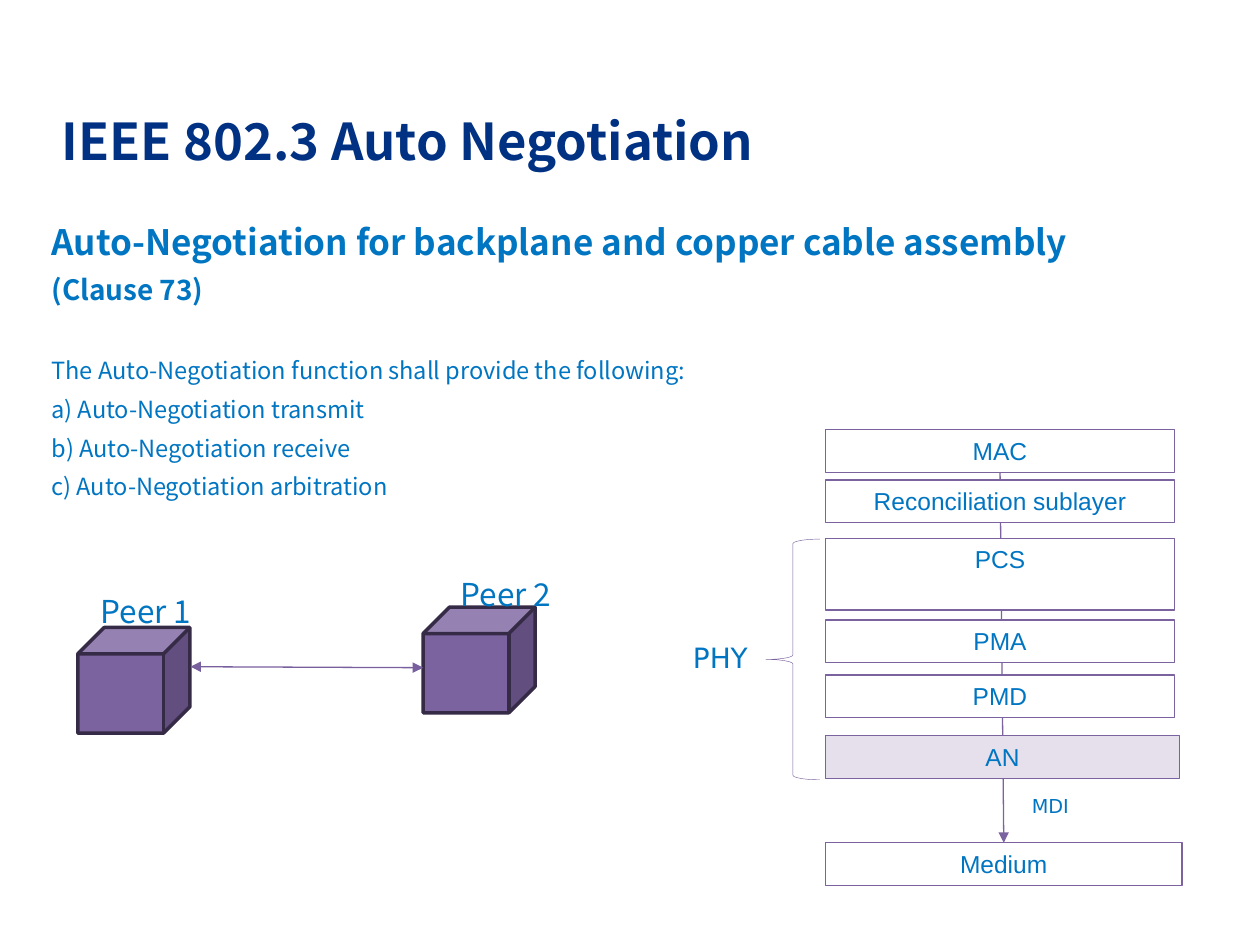
import pptx
import pptx.dml.color
import pptx.enum.shapes
import pptx.enum.text
import pptx.oxml.ns
import pptx.util
import lxml.etree

Cm, Pt = pptx.util.Cm, pptx.util.Pt
SHAPE = pptx.enum.shapes.MSO_SHAPE
STRAIGHT = pptx.enum.shapes.MSO_CONNECTOR.STRAIGHT
ANCHOR = pptx.enum.text.MSO_ANCHOR
ALIGN = pptx.enum.text.PP_ALIGN
SANS, BLUE, PURPLE = "Noto Sans CJK JP", "0075C2", "7B639F"


def rgb(hex_value):
    return pptx.dml.color.RGBColor.from_string(hex_value)


def write(shape, text, size, font=SANS, color=BLUE, bold=False, align=ALIGN.LEFT,
          anchor=ANCHOR.TOP, before=0, after=0, line_height=None):
    """Add one formatted paragraph to a shape, reusing an empty first one."""
    frame = shape.text_frame
    frame.word_wrap = True
    frame.vertical_anchor = anchor
    paragraph = frame.add_paragraph() if frame.text else frame.paragraphs[0]
    paragraph.alignment = align
    paragraph.space_before, paragraph.space_after = Pt(before), Pt(after)
    if line_height:
        paragraph.line_spacing = Pt(line_height)
    run = paragraph.add_run()
    run.text = text
    run.font.name, run.font.size, run.font.bold = font, Pt(size), bold
    run.font.color.rgb = rgb(color)


deck = pptx.Presentation()
deck.slide_width, deck.slide_height = Cm(25.4), Cm(19.05)
slide = deck.slides.add_slide(deck.slide_layouts[6])
shapes = slide.shapes

# Title
title = shapes.add_textbox(Cm(0.99), Cm(1.32), Cm(21.92), Cm(3))
write(title, "IEEE 802.3 Auto Negotiation", 29, color="003182", bold=True,
      anchor=ANCHOR.MIDDLE)

# Clause summary: text, size, bold, space before
clause = shapes.add_textbox(Cm(0.79), Cm(4.32), Cm(23.39), Cm(1.7))
for text, size, bold, before in [
    ("Auto-Negotiation for backplane and copper cable assembly", 20, True, 0),
    ("(Clause 73)", 16, True, 0),
    ("The Auto-Negotiation function shall provide the following:", 13.5, False, 22),
    ("a) Auto-Negotiation transmit", 13.5, False, 0),
    ("b) Auto-Negotiation receive", 13.5, False, 0),
    ("c) Auto-Negotiation arbitration", 13.5, False, 0),
]:
    write(clause, text, size, bold=bold, before=before, after=6,
          line_height=1.2 * size)

# Peers: label position, cube position
for peer, label_left, label_top, cube_left, cube_top in [
    ("Peer 1", 1.78, 11.81, 1.57, 12.65),
    ("Peer 2", 9.04, 11.46, 8.53, 12.24),
]:
    cube = shapes.add_shape(SHAPE.CUBE, Cm(cube_left), Cm(cube_top), Cm(2.26), Cm(2.13))
    cube.shadow.inherit = False
    cube.fill.solid()
    cube.fill.fore_color.rgb = rgb(PURPLE)
    cube.line.color.rgb = rgb("362B46")
    cube.line.width = Pt(2)
    label = shapes.add_textbox(Cm(label_left), Cm(label_top), Cm(4.7), Cm(1.02))
    write(label, peer, 18)

# Link between the peers, and the spine that runs behind the layer stack
peer_link = shapes.add_connector(STRAIGHT, Cm(3.84), Cm(13.44), Cm(8.53), Cm(13.46))
spine = shapes.add_connector(STRAIGHT, Cm(20.16), Cm(9.52), Cm(20.24), Cm(16.99))
for connector, color, arrow_ends in [
    (peer_link, "785F9D", ("headEnd", "tailEnd")),
    (spine, PURPLE, ("tailEnd",)),
]:
    connector.line.color.rgb = rgb(color)
    connector.line.width = Pt(0.75)
    outline = connector.line._get_or_add_ln()
    for end in arrow_ends:
        lxml.etree.SubElement(outline, pptx.oxml.ns.qn(f"a:{end}"), type="triangle")
    lxml.etree.SubElement(connector._element.spPr, pptx.oxml.ns.qn("a:effectLst"))

# Layer stack: name, top, width, height, fill
layers = {}
for name, top, width, height, fill in [
    ("MAC", 8.66, 7.04, 0.86, "FFFFFF"),
    ("Reconciliation sublayer", 9.68, 7.04, 0.86, "FFFFFF"),
    ("PCS", 10.85, 7.04, 1.45, "FFFFFF"),
    ("PMA", 12.5, 7.04, 0.86, "FFFFFF"),
    ("PMD", 13.61, 7.04, 0.86, "FFFFFF"),
    ("AN", 14.83, 7.14, 0.86, "E5E0EC"),
    ("Medium", 16.99, 7.19, 0.86, "FFFFFF"),
]:
    layer = shapes.add_shape(SHAPE.RECTANGLE, Cm(16.64), Cm(top), Cm(width), Cm(height))
    layer.shadow.inherit = False
    layer.fill.solid()
    layer.fill.fore_color.rgb = rgb(fill)
    layer.line.color.rgb = rgb(PURPLE)
    layer.line.width = Pt(0.75)
    write(layer, name, 14, font="Arial", align=ALIGN.CENTER)
    layers[name] = layer
spine.begin_connect(layers["MAC"], 2)
spine.end_connect(layers["Medium"], 0)

# Brace around the PHY layers
phy_brace = shapes.add_shape(SHAPE.LEFT_BRACE, Cm(15.44), Cm(10.87), Cm(1.09), Cm(4.85))
phy_brace.shadow.inherit = False
phy_brace.fill.background()
phy_brace.line.color.rgb = rgb(PURPLE)
phy_brace.line.width = Pt(0.25)

# Stack labels
for text, left, top, height, size in [
    ("PHY", 13.72, 12.78, 0.94, 16),
    ("MDI", 20.55, 15.88, 0.74, 11),
]:
    stack_label = shapes.add_textbox(Cm(left), Cm(top), Cm(2.21), Cm(height))
    write(stack_label, text, size, font="DejaVu Sans")

deck.save("out.pptx")
